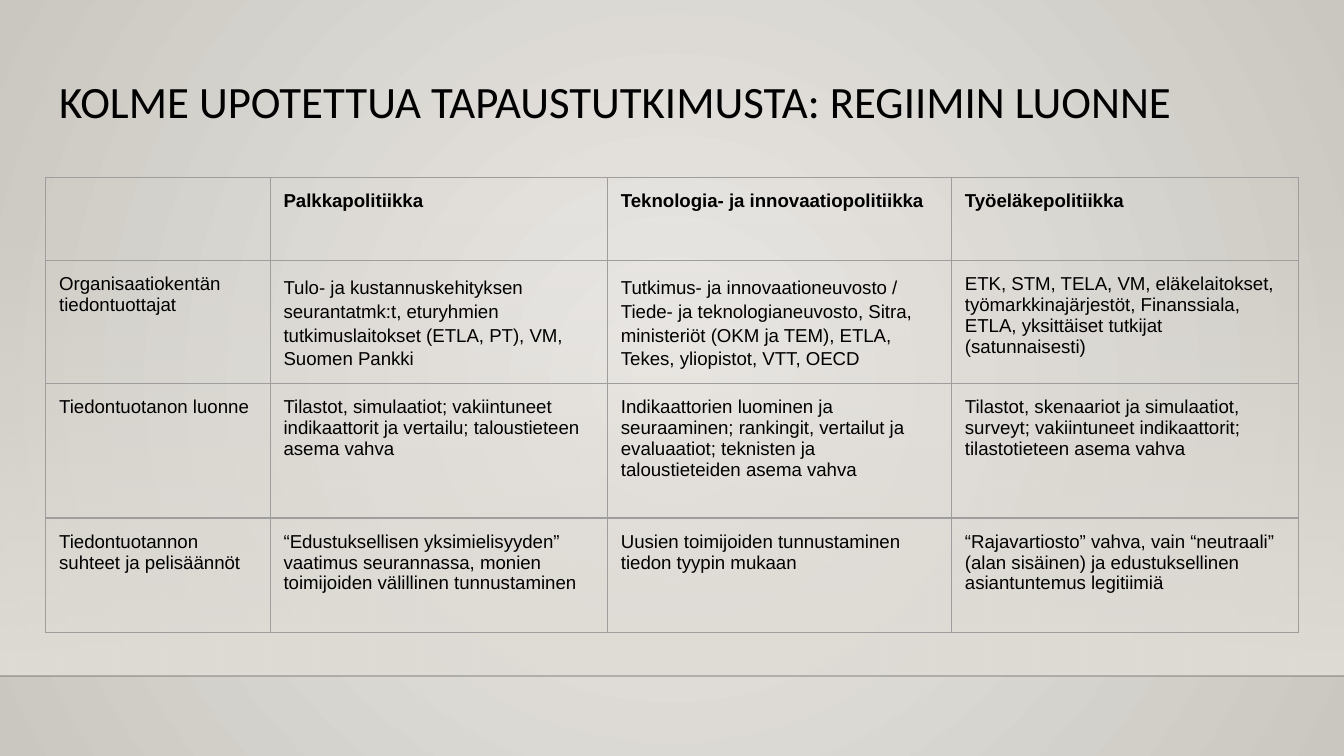
"""Build a slide with a table that compares three embedded case studies."""
from dataclasses import dataclass

from pptx import Presentation
from pptx.dml.color import RGBColor
from pptx.enum import shapes, text
from pptx.oxml import parse_xml
from pptx.oxml.ns import nsdecls, qn
from pptx.util import Inches, Pt


@dataclass(frozen=True)
class Theme:
    """Colours, fonts and sizes of the slide."""

    ink: str = "000000"
    center: str = "ECEAE7"
    edge: str = "CAC7C1"
    floor: str = "DFDBD5"
    horizon: str = "000001"
    border: str = "9E9E9E"
    title_font: str = "Calibri"
    body_font: str = "Arial"
    title_size: int = 24
    body_size: int = 10
    border_width: float = 0.75


THEME = Theme()
WIDTH = 10
HEIGHT = WIDTH * 9 / 16
LEFT, CONTENT_WIDTH = 0.34, 9.32
TITLE_TOP, TITLE_HEIGHT = 0.49, 0.63
TABLE_TOP = 1.32
FLOOR_TOP, HORIZON = 1.66, 5.03
PADDING = 0.1
COLUMNS = (1.67, 2.51, 2.56, 2.58)
ROWS = (0.62, 0.91, 1, 0.85)
LOOSE_CELLS = {(1, 1), (1, 2)}

TITLE = "KOLME UPOTETTUA TAPAUSTUTKIMUSTA: REGIIMIN LUONNE"
CELLS = (
    ("", "Palkkapolitiikka", "Teknologia- ja innovaatiopolitiikka", "Työeläkepolitiikka"),
    (
        "Organisaatiokentän tiedontuottajat",
        "Tulo- ja kustannuskehityksen seurantatmk:t, eturyhmien tutkimuslaitokset "
        "(ETLA, PT), VM, Suomen Pankki",
        "Tutkimus- ja innovaationeuvosto / Tiede- ja teknologianeuvosto, Sitra, "
        "ministeriöt (OKM ja TEM), ETLA, Tekes, yliopistot, VTT, OECD",
        "ETK, STM, TELA, VM, eläkelaitokset, työmarkkinajärjestöt, Finanssiala, "
        "ETLA, yksittäiset tutkijat (satunnaisesti)",
    ),
    (
        "Tiedontuotanon luonne",
        "Tilastot, simulaatiot; vakiintuneet indikaattorit ja vertailu; "
        "taloustieteen asema vahva",
        "Indikaattorien luominen ja seuraaminen; rankingit, vertailut ja evaluaatiot; "
        "teknisten ja taloustieteiden asema vahva",
        "Tilastot, skenaariot ja simulaatiot, surveyt; vakiintuneet indikaattorit; "
        "tilastotieteen asema vahva",
    ),
    (
        "Tiedontuotannon suhteet ja pelisäännöt",
        "“Edustuksellisen yksimielisyyden” vaatimus seurannassa, monien toimijoiden "
        "välillinen tunnustaminen",
        "Uusien toimijoiden tunnustaminen tiedon tyypin mukaan",
        "“Rajavartiosto” vahva, vain “neutraali” (alan sisäinen) ja edustuksellinen "
        "asiantuntemus legitiimiä",
    ),
)


def apply(target, values):
    """Set each named attribute on the target."""
    for name, value in values.items():
        setattr(target, name, value)


def padding():
    """Return equal margins for a text frame or a cell."""
    return {f"margin_{side}": Inches(PADDING) for side in ("left", "top", "right", "bottom")}


def write(paragraph, content, font, size, bold=False, spacing=1.0):
    """Write one left-aligned paragraph."""
    paragraph.text = content
    apply(paragraph, {"alignment": text.PP_ALIGN.LEFT, "line_spacing": spacing})
    apply(paragraph.font, {"name": font, "size": Pt(size), "bold": bold})
    paragraph.font.color.rgb = RGBColor.from_string(THEME.ink)


def set_gradient(properties, stops, direction):
    """Swap a solid fill for a gradient of (position, colour, opacity) stops."""
    marks = "".join(
        f'<a:gs pos="{position * 1000}"><a:srgbClr val="{color}">'
        f'<a:alpha val="{opacity * 1000}"/></a:srgbClr></a:gs>'
        for position, color, opacity in stops
    )
    gradient = parse_xml(
        f'<a:gradFill rotWithShape="1" {nsdecls("a")}>'
        f"<a:gsLst>{marks}</a:gsLst>{direction}</a:gradFill>"
    )
    properties.replace(properties.find(qn("a:solidFill")), gradient)


def add_background(slide):
    """Fill the slide with a gradient that spreads from its middle."""
    slide.background.fill.solid()
    set_gradient(
        slide.element.find(".//" + qn("p:bgPr")),
        ((0, THEME.center, 100), (100, THEME.edge, 100)),
        '<a:path path="circle"><a:fillToRect l="50000" t="50000" r="50000" b="50000"/></a:path>',
    )


def add_floor(slide):
    """Add the fading band and the faint line below it."""
    band = slide.shapes.add_shape(
        shapes.MSO_SHAPE.RECTANGLE, 0, Inches(FLOOR_TOP), Inches(WIDTH), Inches(HORIZON - FLOOR_TOP)
    )
    band.shadow.inherit = False
    band.line.fill.background()
    band.fill.solid()
    set_gradient(
        band.element.spPr,
        ((0, THEME.floor, 0), (100, THEME.floor, 100)),
        '<a:lin ang="5400000" scaled="0"/>',
    )
    line = slide.shapes.add_connector(
        shapes.MSO_CONNECTOR.STRAIGHT, 0, Inches(HORIZON), Inches(WIDTH), Inches(HORIZON)
    )
    line.line.width = Pt(1)
    line.line.color.rgb = RGBColor.from_string(THEME.horizon)
    color = line.element.spPr.find(".//" + qn("a:srgbClr"))
    color.append(parse_xml(f'<a:alpha val="20000" {nsdecls("a")}/>'))
    line.element.spPr.append(parse_xml(f'<a:effectLst {nsdecls("a")}/>'))


def add_title(slide):
    """Place and format the title, in front of the floor."""
    title = slide.shapes.title
    box = (LEFT, TITLE_TOP, CONTENT_WIDTH, TITLE_HEIGHT)
    apply(title, dict(zip(("left", "top", "width", "height"), map(Inches, box))))
    apply(title.text_frame, {
        "word_wrap": True,
        "auto_size": text.MSO_AUTO_SIZE.NONE,
        "vertical_anchor": text.MSO_ANCHOR.TOP,
        **padding(),
    })
    write(title.text_frame.paragraphs[0], TITLE, THEME.title_font, THEME.title_size, spacing=0.9)
    slide.shapes.element.append(title.element)


def set_borders(cell):
    """Draw a thin line on all four sides of a cell."""
    properties = cell._tc.get_or_add_tcPr()
    for index, side in enumerate("LRTB"):
        properties.insert(index, parse_xml(
            f'<a:ln{side} w="{Pt(THEME.border_width)}" {nsdecls("a")}>'
            f'<a:solidFill><a:srgbClr val="{THEME.border}"/></a:solidFill></a:ln{side}>'
        ))


def add_table(slide):
    """Add the comparison table."""
    table = slide.shapes.add_table(
        len(ROWS), len(COLUMNS), Inches(LEFT), Inches(TABLE_TOP),
        Inches(sum(COLUMNS)), Inches(sum(ROWS)),
    ).table
    apply(table, {"first_row": False, "horz_banding": False})
    for column, width in zip(table.columns, COLUMNS):
        column.width = Inches(width)
    for row_index, (row, height) in enumerate(zip(table.rows, ROWS)):
        row.height = Inches(height)
        for column_index, cell in enumerate(row.cells):
            apply(cell, {"vertical_anchor": text.MSO_ANCHOR.TOP, **padding()})
            cell.fill.background()
            set_borders(cell)
            content = CELLS[row_index][column_index]
            if content:
                spacing = 1.15 if (row_index, column_index) in LOOSE_CELLS else 1.0
                write(cell.text_frame.paragraphs[0], content, THEME.body_font,
                      THEME.body_size, row_index == 0, spacing)


def main():
    """Build and save the presentation."""
    presentation = Presentation()
    apply(presentation, {"slide_width": Inches(WIDTH), "slide_height": Inches(HEIGHT)})
    slide = presentation.slides.add_slide(presentation.slide_layouts.get_by_name("Title Only"))
    add_background(slide)
    add_floor(slide)
    add_title(slide)
    add_table(slide)
    presentation.save("out.pptx")


if __name__ == "__main__":
    main()
